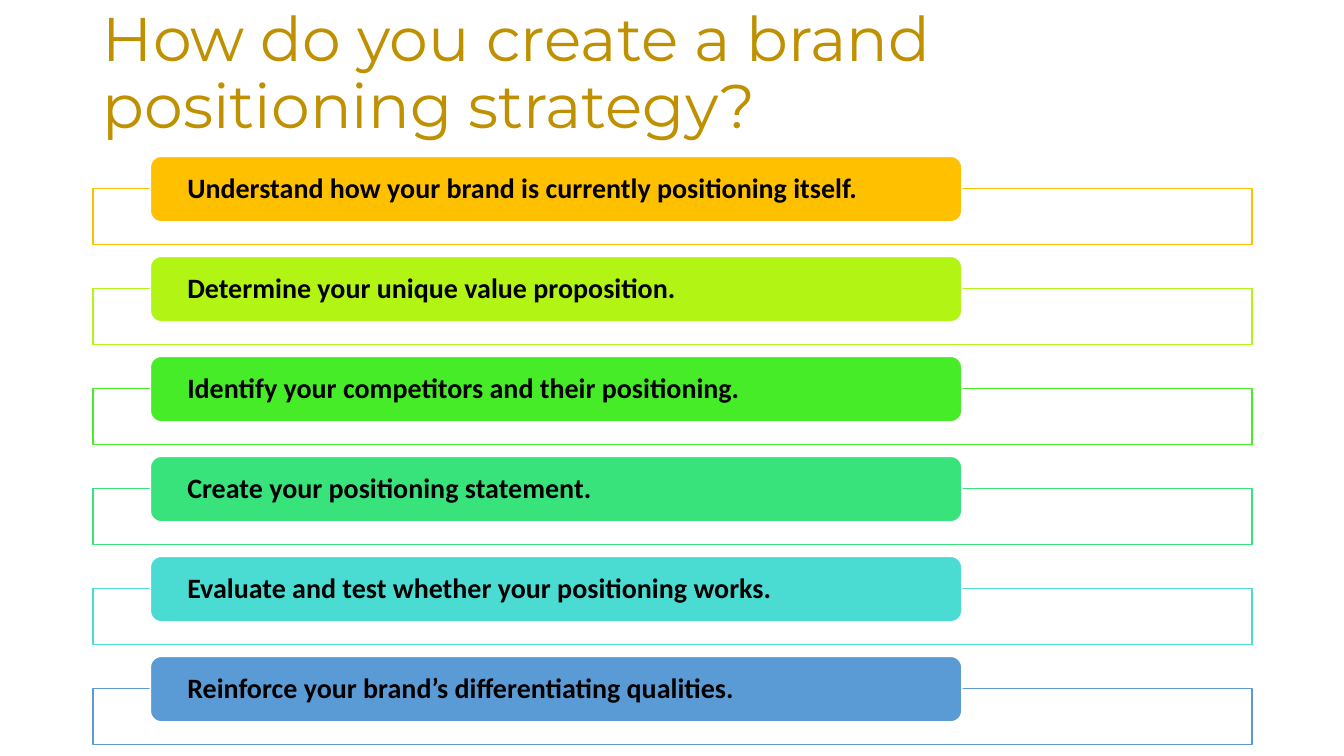
"""Build a slide that lists six steps of a brand positioning strategy."""
import dataclasses

import lxml.etree
import pptx
import pptx.dml.color
import pptx.enum.shapes
import pptx.enum.text
import pptx.oxml.ns
import pptx.shapes.autoshape
import pptx.slide
import pptx.text.text
import pptx.util

Cm = pptx.util.Cm
Pt = pptx.util.Pt
Kind = pptx.enum.shapes.MSO_SHAPE


@dataclasses.dataclass(frozen=True)
class Theme:
    gold: str = "BF9000"
    black: str = "000000"
    white: str = "FFFFFF"
    head_font: str = "Montserrat"
    step_font: str = "Calibri"
    head_size: int = 44
    step_size: int = 20
    line_width: int = 1


@dataclasses.dataclass(frozen=True)
class Box:
    left: float
    top: float
    width: float
    height: float


@dataclasses.dataclass(frozen=True)
class Step:
    text: str
    color: str


THEME = Theme()
HEAD = Box(2.34, 0.05, 29.21, 3.68)
BAR = Box(3.79, 3.94, 20.45, 1.65)
FRAME = Box(2.34, 4.75, 29.21, 1.41)
PITCH = 2.52
INSET = 0.85

STEPS = [
    Step("Understand how your brand is currently positioning itself.", "FFC000"),
    Step("Determine your unique value proposition.", "B2F514"),
    Step("Identify your competitors and their positioning.", "46EC27"),
    Step("Create your positioning statement.", "39E37B"),
    Step("Evaluate and test whether your positioning works.", "4ADCD2"),
    Step("Reinforce your brand’s differentiating qualities.", "5B9BD5"),
]


def tint(code: str) -> pptx.dml.color.RGBColor:
    return pptx.dml.color.RGBColor.from_string(code)


def write(frame: pptx.text.text.TextFrame, text: str, *, font: str, size: int,
          color: str, bold: bool = False) -> None:
    frame.word_wrap = True
    frame.auto_size = pptx.enum.text.MSO_AUTO_SIZE.NONE
    frame.vertical_anchor = pptx.enum.text.MSO_ANCHOR.MIDDLE
    line = frame.paragraphs[0]
    line.alignment = pptx.enum.text.PP_ALIGN.LEFT
    line.line_spacing = 0.9
    run = line.add_run()
    run.text = text
    run.font.name = font
    run.font.size = Pt(size)
    run.font.bold = bold
    run.font.color.rgb = tint(color)


def draw(slide: pptx.slide.Slide, kind: Kind, box: Box, shift: float,
         fill: str, line: str) -> pptx.shapes.autoshape.Shape:
    shape = slide.shapes.add_shape(kind, Cm(box.left), Cm(box.top + shift),
                                   Cm(box.width), Cm(box.height))
    shape.shadow.inherit = False
    shape.fill.solid()
    shape.fill.fore_color.rgb = tint(fill)
    shape.line.color.rgb = tint(line)
    shape.line.width = Pt(THEME.line_width)
    return shape


def fade(shape: pptx.shapes.autoshape.Shape, percent: int) -> None:
    paint = shape.element.spPr.find(pptx.oxml.ns.qn("a:solidFill"))
    alpha = lxml.etree.SubElement(paint[0], pptx.oxml.ns.qn("a:alpha"))
    alpha.set("val", str(percent * 1000))


def add_head(slide: pptx.slide.Slide) -> None:
    title = slide.shapes.title
    title.left, title.top = Cm(HEAD.left), Cm(HEAD.top)
    title.width, title.height = Cm(HEAD.width), Cm(HEAD.height)
    write(title.text_frame, "How do you create a brand positioning strategy?",
          font=THEME.head_font, size=THEME.head_size, color=THEME.gold)


def add_step(slide: pptx.slide.Slide, step: Step, shift: float) -> None:
    frame = draw(slide, Kind.RECTANGLE, FRAME, shift, THEME.white, step.color)
    fade(frame, 90)
    bar = draw(slide, Kind.ROUNDED_RECTANGLE, BAR, shift, step.color, THEME.white)
    text = bar.text_frame
    text.margin_left = text.margin_right = Cm(INSET)
    text.margin_top = text.margin_bottom = 0
    write(text, step.text, font=THEME.step_font, size=THEME.step_size,
          color=THEME.black, bold=True)


def main() -> None:
    deck = pptx.Presentation()
    deck.slide_width, deck.slide_height = Cm(33.87), Cm(19.05)
    slide = deck.slides.add_slide(deck.slide_layouts.get_by_name("Title Only"))
    add_head(slide)
    for row, step in enumerate(STEPS):
        add_step(slide, step, row * PITCH)
    deck.save("out.pptx")


if __name__ == "__main__":
    main()
